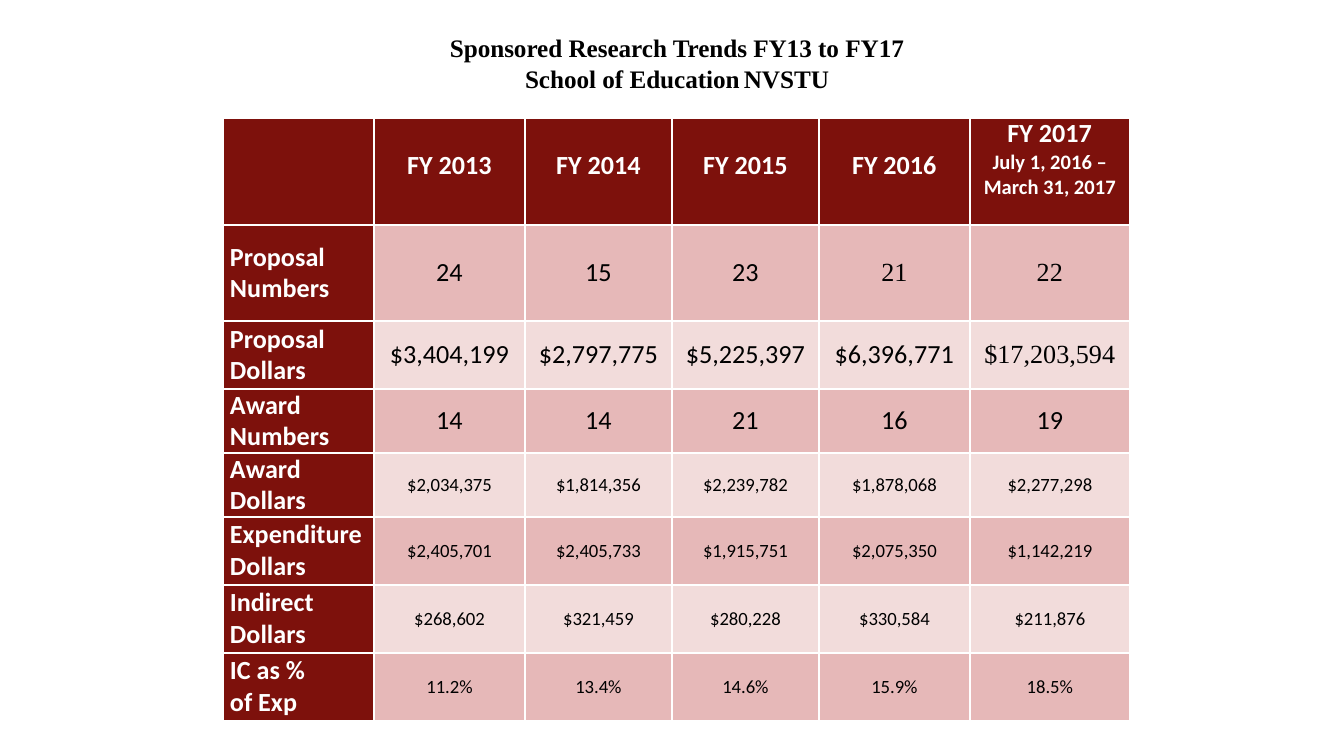
from dataclasses import dataclass

from pptx import Presentation
from pptx.dml.color import RGBColor
from pptx.enum.text import MSO_ANCHOR, MSO_AUTO_SIZE, PP_ALIGN
from pptx.util import Emu, Pt

PX = 914400 / 134.4
TOP, MIDDLE = MSO_ANCHOR.TOP, MSO_ANCHOR.MIDDLE
LEFT, CENTER = PP_ALIGN.LEFT, PP_ALIGN.CENTER
NO_AUTOFIT = MSO_AUTO_SIZE.NONE


@dataclass(frozen=True)
class Theme:
    maroon: RGBColor = RGBColor(0x7D, 0x11, 0x0C)
    rose: RGBColor = RGBColor(0xE6, 0xB8, 0xB8)
    blush: RGBColor = RGBColor(0xF2, 0xDC, 0xDB)
    white: RGBColor = RGBColor(0xFF, 0xFF, 0xFF)
    black: RGBColor = RGBColor(0, 0, 0)
    sans: str = "Calibri"
    serif: str = "Times New Roman"
    title: Pt = Pt(13.5)
    title_gap: Pt = Pt(9)
    large: Pt = Pt(14)
    period: Pt = Pt(11)
    small: Pt = Pt(10)


THEME = Theme()

COLUMN_WIDTHS = [151, 151, 147, 147, 151, 160]
ROW_HEIGHTS = [107, 96, 68, 64, 64, 68, 68, 68]
HEADER_LINE = 32
FIRST_SMALL_ROW = 4
SERIF_CELLS = {(1, 4), (1, 5), (2, 5)}
ROWS = [
    ["", "FY 2013", "FY 2014", "FY 2015", "FY 2016", "FY 2017\nJuly 1, 2016 – March 31, 2017"],
    ["Proposal\nNumbers", "24", "15", "23", "21", "22"],
    ["Proposal\nDollars", "$3,404,199", "$2,797,775", "$5,225,397", "$6,396,771", "$17,203,594"],
    ["Award\nNumbers", "14", "14", "21", "16", "19"],
    ["Award Dollars", "$2,034,375", "$1,814,356", "$2,239,782", "$1,878,068", "$2,277,298"],
    ["Expenditure Dollars", "$2,405,701", "$2,405,733", "$1,915,751", "$2,075,350", "$1,142,219"],
    ["Indirect\nDollars", "$268,602", "$321,459", "$280,228", "$330,584", "$211,876"],
    ["IC as %\nof Exp", "11.2%", "13.4%", "14.6%", "15.9%", "18.5%"],
]


def px(length):
    return Emu(round(length * PX))


def format_paragraph(paragraph, size, color, bold, font_name, alignment):
    paragraph.alignment = alignment
    font = paragraph.font
    font.size, font.bold, font.name = size, bold, font_name
    font.color.rgb = color


presentation = Presentation()
presentation.slide_width, presentation.slide_height = px(1344), px(756)
slide = presentation.slides.add_slide(presentation.slide_layouts[5])

# Title
title = slide.shapes.title
title.left, title.top, title.width, title.height = px(257), px(26), px(840), px(75)
title_frame = title.text_frame
title_frame.auto_size = NO_AUTOFIT
title_frame.vertical_anchor = TOP
title_frame.text = "Sponsored Research Trends FY13 to FY17\nSchool of Education"
gap = title_frame.paragraphs[1].add_run()
gap.text = " "
gap.font.size, gap.font.bold = THEME.title_gap, False
title_frame.paragraphs[1].add_run().text = "NVSTU"
for paragraph in title_frame.paragraphs:
    format_paragraph(paragraph, THEME.title, THEME.black, True, THEME.serif, CENTER)

# Table: the default style supplies the white cell borders
table = slide.shapes.add_table(
    len(ROWS), len(COLUMN_WIDTHS), px(223), px(118),
    px(sum(COLUMN_WIDTHS)), px(sum(ROW_HEIGHTS)),
).table
for column, width in zip(table.columns, COLUMN_WIDTHS):
    column.width = px(width)
for row, height in zip(table.rows, ROW_HEIGHTS):
    row.height = px(height)

for row_index, texts in enumerate(ROWS):
    for column_index, text in enumerate(texts):
        cell = table.cell(row_index, column_index)
        is_header, is_label = row_index == 0, column_index == 0
        is_heading = is_header or is_label
        band = THEME.rose if row_index % 2 else THEME.blush
        cell.fill.solid()
        cell.fill.fore_color.rgb = THEME.maroon if is_heading else band
        cell.vertical_anchor = TOP if is_header else MIDDLE
        cell.margin_left = cell.margin_right = px(7 if is_heading else 8)
        cell.margin_top = cell.margin_bottom = px(0 if is_heading else 4)
        if is_header and "\n" not in text:
            cell.margin_top = px(HEADER_LINE)

        is_small = row_index >= FIRST_SMALL_ROW and not is_label
        size = THEME.small if is_small else THEME.large
        color = THEME.white if is_heading else THEME.black
        font_name = THEME.serif if (row_index, column_index) in SERIF_CELLS else THEME.sans
        cell.text = text
        for paragraph in cell.text_frame.paragraphs:
            format_paragraph(paragraph, size, color, is_heading, font_name,
                             LEFT if is_label else CENTER)

table.cell(0, 5).text_frame.paragraphs[1].font.size = THEME.period

presentation.save("out.pptx")
